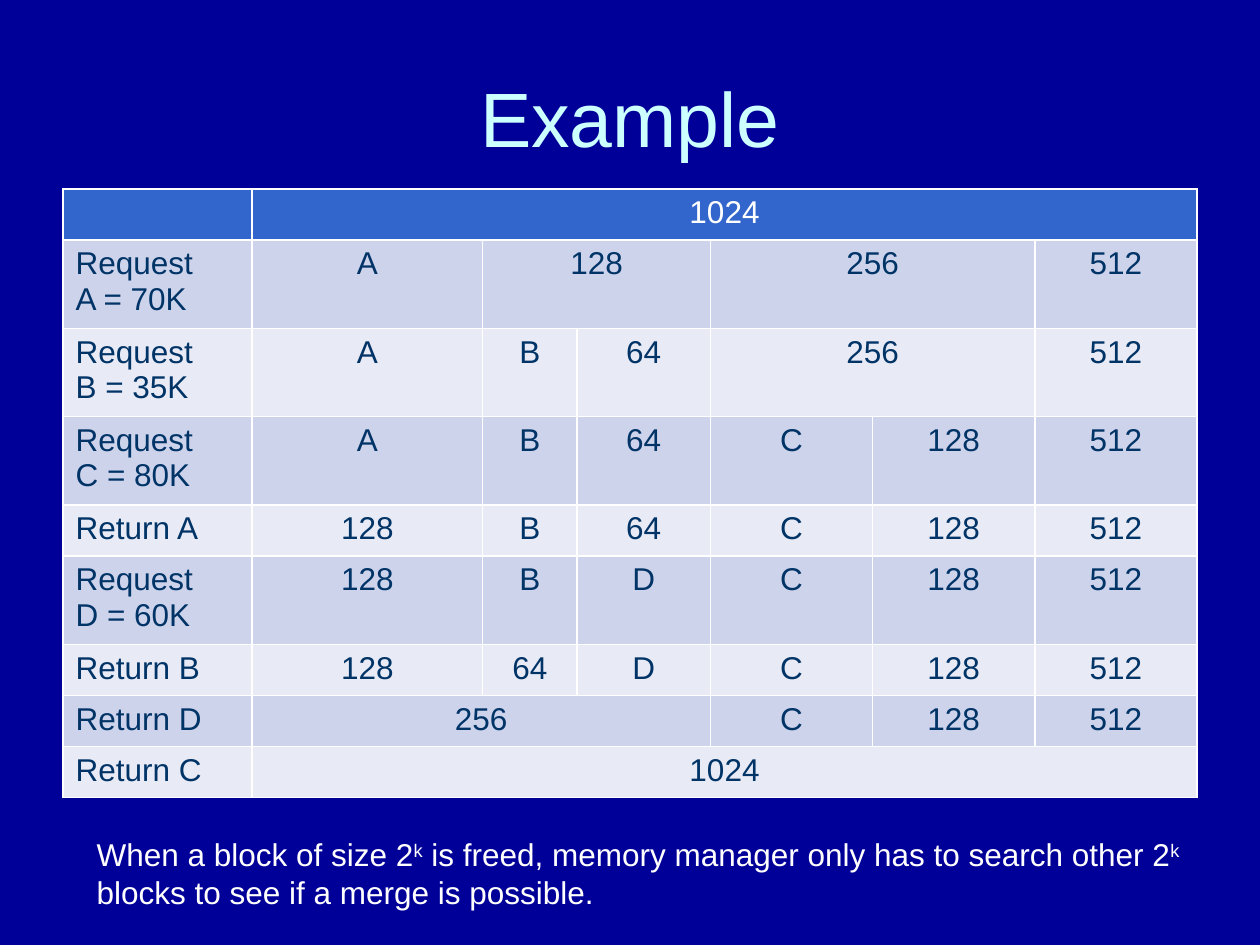
"""Build the Example slide: a title, a table of blocks and a note."""
import pptx
import pptx.util
import pptx.dml.color
import pptx.enum.text
import pptx.oxml
import pptx.oxml.ns

TITLE = "Example"
COLS = [3.81, 4.65, 1.9, 2.69, 3.27, 3.27, 3.27]
ROWS = [
    ("", [("1024", 6)]),
    ("Request\nA = 70K", [("A", 1), ("128", 2), ("256", 2), ("512", 1)]),
    ("Request\nB = 35K", [("A", 1), ("B", 1), ("64", 1), ("256", 2), ("512", 1)]),
    ("Request\nC = 80K", [(t, 1) for t in ("A", "B", "64", "C", "128", "512")]),
    ("Return A", [(t, 1) for t in ("128", "B", "64", "C", "128", "512")]),
    ("Request\nD = 60K", [(t, 1) for t in ("128", "B", "D", "C", "128", "512")]),
    ("Return B", [(t, 1) for t in ("128", "64", "D", "C", "128", "512")]),
    ("Return D", [("256", 3), ("C", 1), ("128", 1), ("512", 1)]),
    ("Return C", [("1024", 6)]),
]
NOTE = [
    ("When a block of size 2", False), ("k", True),
    (" is freed, memory manager only has to search other 2", False), ("k", True),
    (" blocks to see if a merge is possible.", False),
]
HEAD, BANDS = "3366CC", ("E8EAF6", "CED3EC")
ALIGN = pptx.enum.text.PP_ALIGN
Cm = pptx.util.Cm


def paint(fill, hue):
    fill.solid()
    fill.fore_color.rgb = pptx.dml.color.RGBColor.from_string(hue)


def style(para, size, hue, align):
    para.alignment = align
    para.font.name = "Arial"
    para.font.size = pptx.util.Pt(size)
    para.font.bold = False
    paint(para.font.fill, hue)


def edge(cell):
    props = cell._tc.get_or_add_tcPr()
    for side in "LRTB":
        props.append(pptx.oxml.parse_xml(
            f'<a:ln{side} {pptx.oxml.ns.nsdecls("a")} w="12700">'
            f'<a:solidFill><a:srgbClr val="FFFFFF"/></a:solidFill></a:ln{side}>'))


def add_grid(slide):
    highs = [1.78 if "\n" in label else 1.03 for label, _ in ROWS]
    grid = slide.shapes.add_table(len(ROWS), len(COLS), Cm(1.27), Cm(3.81),
                                  Cm(sum(COLS)), Cm(sum(highs))).table
    for col, wide in zip(grid.columns, COLS):
        col.width = Cm(wide)
    for r, (label, blocks) in enumerate(ROWS):
        grid.rows[r].height = Cm(highs[r])
        for c in range(len(COLS)):
            cell = grid.cell(r, c)
            edge(cell)
            paint(cell.fill, BANDS[r % 2] if r else HEAD)
        c = 0
        for text, span in [(label, 1)] + blocks:
            cell = grid.cell(r, c)
            if span > 1:
                cell.merge(grid.cell(r, c + span - 1))
            cell.text = text
            for para in cell.text_frame.paragraphs:
                style(para, 18, "003366" if r else "FFFFFF",
                      ALIGN.CENTER if c else ALIGN.LEFT)
            c += span


def add_note(slide):
    frame = slide.shapes.add_textbox(Cm(1.7), Cm(16.71), Cm(22.43), Cm(1.8)).text_frame
    frame.word_wrap = True
    para = frame.paragraphs[0]
    style(para, 18, "FFFFFF", ALIGN.LEFT)
    for text, raised in NOTE:
        run = para.add_run()
        run.text = text
        if raised:
            run._r.get_or_add_rPr().set("baseline", "30000")


def main():
    deck = pptx.Presentation()
    deck.slide_width, deck.slide_height = Cm(25.4), Cm(19.05)
    slide = deck.slides.add_slide(deck.slide_layouts[5])
    paint(slide.background.fill, "000099")
    title = slide.shapes.title
    title.left, title.top, title.width, title.height = Cm(1.27), Cm(0.76), Cm(22.86), Cm(3.18)
    title.text = TITLE
    title.text_frame.vertical_anchor = pptx.enum.text.MSO_ANCHOR.MIDDLE
    style(title.text_frame.paragraphs[0], 44, "CCFFFF", ALIGN.CENTER)
    add_grid(slide)
    add_note(slide)
    deck.save("out.pptx")


if __name__ == "__main__":
    main()
